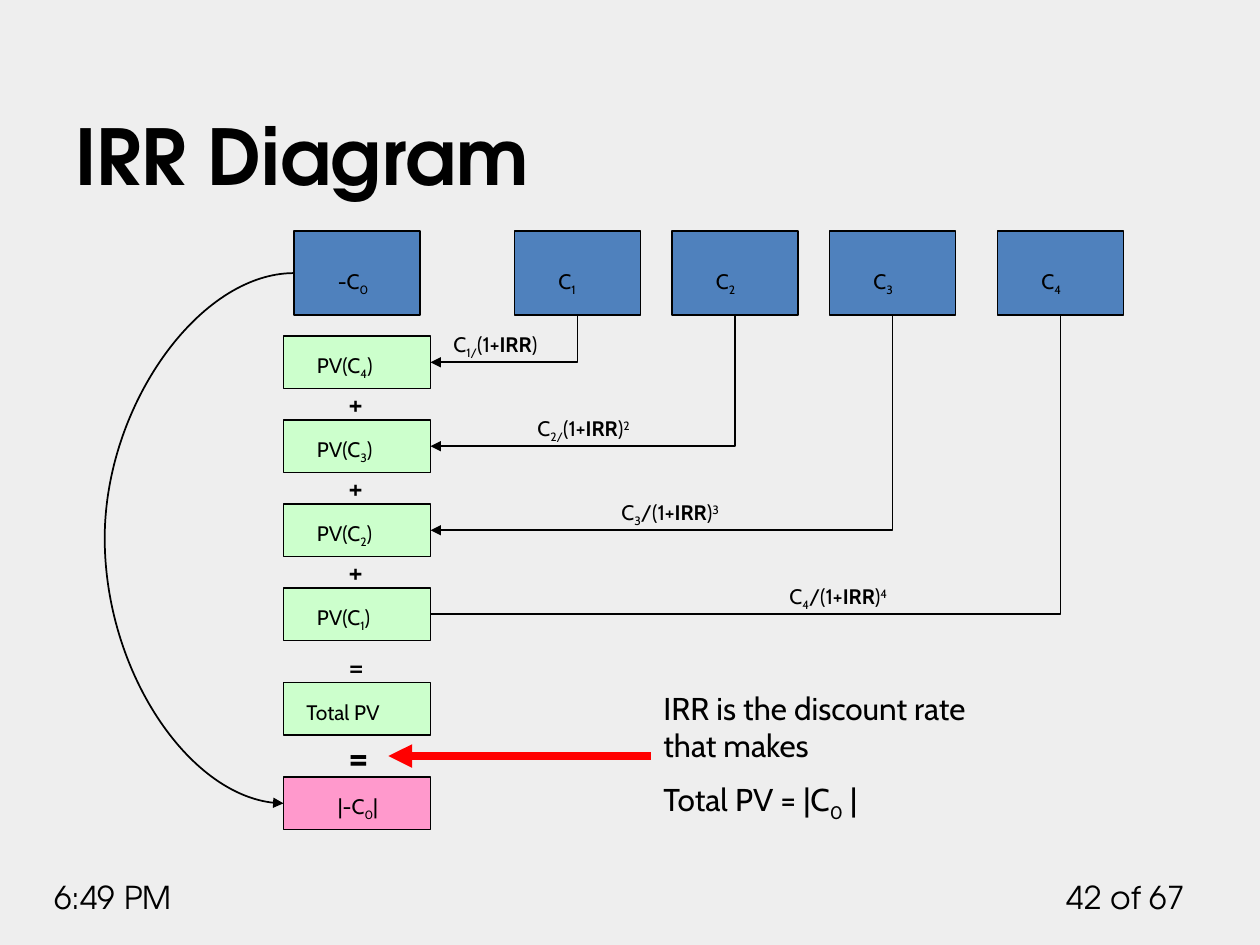
import dataclasses

import lxml.etree
import pptx
import pptx.dml.color
import pptx.enum.shapes
import pptx.enum.text
import pptx.oxml.ns
import pptx.util


@dataclasses.dataclass(frozen=True)
class Theme:
    """Colours, fonts and type sizes of the deck."""
    ground: str = "EEEEEE"
    ink: str = "000000"
    cash: str = "4F81BD"
    value: str = "CCFFCC"
    outlay: str = "FF99CC"
    accent: str = "FF0000"
    heading_font: str = "TeX Gyre Adventor"
    body_font: str = "Cabin"
    title: int = 44
    equals: int = 24
    body: int = 18
    label: int = 12


def grid(count):
    """Return a length of count twelfths of an inch."""
    return pptx.util.Cm(count * 2.54 / 12)


def colour(code):
    """Return the colour for a hex code."""
    return pptx.dml.color.RGBColor.from_string(code)


def sub(letter, index):
    """Return the spans of a symbol with a subscript."""
    return [(letter, ""), (index, "sub")]


class Painter:
    """Hold the theme and the current slide and draw each kind of element."""

    def __init__(self, slide, theme):
        """Keep the slide and theme and paint the background."""
        self.slide, self.theme = slide, theme
        slide.background.fill.solid()
        slide.background.fill.fore_color.rgb = colour(theme.ground)

    def box(self, left, top, width, height, fill):
        """Draw an outlined process box."""
        box = self.slide.shapes.add_shape(
            pptx.enum.shapes.MSO_SHAPE.FLOWCHART_PROCESS,
            grid(left), grid(top), grid(width), grid(height))
        box.shadow.inherit = False
        box.fill.solid()
        box.fill.fore_color.rgb = colour(fill)
        box.line.color.rgb = colour(self.theme.ink)
        box.line.width = pptx.util.Pt(1)

    def text(self, left, top, width, height, paragraphs, size, font=None,
             bold=False, align="LEFT", anchor="TOP"):
        """Write paragraphs made of (text, style) spans."""
        box = self.slide.shapes.add_textbox(
            grid(left), grid(top), grid(width), grid(height))
        frame = box.text_frame
        frame.word_wrap = True
        frame.vertical_anchor = getattr(pptx.enum.text.MSO_ANCHOR, anchor)
        for number, spans in enumerate(paragraphs):
            para = frame.add_paragraph() if number else frame.paragraphs[0]
            para.alignment = getattr(pptx.enum.text.PP_ALIGN, align)
            if number:
                para.space_before = pptx.util.Pt(size / 2)
            for words, style in spans:
                span = para.add_run()
                span.text = words
                span.font.size = pptx.util.Pt(size)
                span.font.name = font or self.theme.body_font
                span.font.color.rgb = colour(self.theme.ink)
                span.font.bold = bold or style == "bold"
                if style in ("sub", "sup"):
                    shift = "-25000" if style == "sub" else "30000"
                    span.font._element.set("baseline", shift)

    def line(self, begin, end, kind="STRAIGHT", code=None, width=1, arrow=True):
        """Draw a connector, with an arrowhead at its end if asked."""
        line = self.slide.shapes.add_connector(
            getattr(pptx.enum.shapes.MSO_CONNECTOR, kind),
            *(grid(value) for value in (*begin, *end)))
        line.line.color.rgb = colour(code or self.theme.ink)
        line.line.width = pptx.util.Pt(width)
        if arrow:
            lxml.etree.SubElement(line.line._ln, pptx.oxml.ns.qn("a:tailEnd"), type="triangle")
        properties = line._element.spPr
        lxml.etree.SubElement(properties, pptx.oxml.ns.qn("a:effectLst"))
        return properties

    def elbow(self, begin, end, arrow):
        """Draw a connector that goes down and then left."""
        middle_x, middle_y = (begin[0] + end[0]) / 2, (begin[1] + end[1]) / 2
        half_width, half_height = (end[1] - begin[1]) / 2, (begin[0] - end[0]) / 2
        properties = self.line((middle_x - half_width, middle_y - half_height),
                               (middle_x + half_width, middle_y + half_height),
                               "ELBOW", arrow=arrow)
        properties.find(pptx.oxml.ns.qn("a:xfrm")).set("rot", "5400000")
        properties.find(pptx.oxml.ns.qn("a:prstGeom")).set("prst", "bentConnector2")

    def curve(self, begin, end, reach):
        """Draw a curved arrow that bulges to the left by reach."""
        properties = self.line((end[0], end[1]), (begin[0], begin[1]), "CURVE")
        properties.find(pptx.oxml.ns.qn("a:xfrm")).set("rot", "10800000")
        geometry = properties.find(pptx.oxml.ns.qn("a:prstGeom"))
        for old in list(geometry):
            geometry.remove(old)
        adjustments = lxml.etree.SubElement(geometry, pptx.oxml.ns.qn("a:avLst"))
        bulge = round(100000 * reach / (begin[0] - end[0]))
        lxml.etree.SubElement(adjustments, pptx.oxml.ns.qn("a:gd"),
                              name="adj1", fmla=f"val {bulge}")


def main():
    """Build the IRR diagram and save the deck."""
    theme = Theme()
    deck = pptx.Presentation()
    deck.slide_width, deck.slide_height = grid(120), grid(90)
    page = Painter(deck.slides.add_slide(deck.slide_layouts[6]), theme)

    page.text(6, 4.7, 108, 15, [[("IRR Diagram", "")]], theme.title,
              theme.heading_font, bold=True, anchor="BOTTOM")
    page.text(4, 83, 19, 4.8, [[("6:49 PM", "")]], theme.body, theme.heading_font)
    page.text(100, 83, 14, 4.8, [[("42 of 67", "")]], theme.body,
              theme.heading_font, align="RIGHT")

    columns = [28, 49, 64, 79, 95]
    for period, left in enumerate(columns):
        page.box(left, 22, 12, 8, theme.cash)
        symbol = sub("C" if period else "-C", str(period))
        page.text(left + 3, 25, 6, 3.6, [symbol], theme.label)

    stack_left, stack_width, stack_height = 27, 14, 5
    stack_right = stack_left + stack_width
    formulas = [
        (42, 13, [("C", ""), ("1/", "sub"), ("(1+", "")], ""),
        (50, 14, [("C", ""), ("2/", "sub"), ("(1+", "")], "2"),
        (58, 13, sub("C", "3") + [("/(1+", "")], "3"),
        (74, 13, sub("C", "4") + [("/(1+", "")], "4"),
    ]
    for period, (left, width, start, power) in enumerate(formulas, 1):
        top = 24 + 8 * period
        last = period == len(formulas)
        page.box(stack_left, top, stack_width, stack_height, theme.value)
        page.text(29, top + 1, 9, 3.6,
                  [sub("PV(C", str(5 - period)) + [(")", "")]], theme.label)
        page.elbow((columns[period] + 6, 30), (stack_right, top + 2.5), arrow=not last)
        spans = start + [("IRR", "bold"), (")", "")]
        if power:
            spans.append((power, "sup"))
        page.text(left, top - 1, width, 3.6, [spans], theme.label)
        if not last:
            page.text(32, top + 4, 4, 4.8, [[("+", "")]], theme.body)

    page.text(32, 61, 4, 4.8, [[("=", "")]], theme.body)
    page.box(stack_left, 65, stack_width, stack_height, theme.value)
    page.text(28, 66, 13, 3.6, [[("Total PV", "")]], theme.label)
    page.text(32, 69, 4, 6, [[("=", "")]], theme.equals, bold=True)
    page.box(stack_left, 74, stack_width, stack_height, theme.outlay)
    page.text(31, 75, 7, 3.6, [sub("|-C", "0") + [("|", "")]], theme.label)

    page.curve((28, 26), (stack_left, 76.5), 18)
    page.line((62, 72), (37, 72), code=theme.accent, width=4.5)
    page.text(62, 65, 33, 13.8,
              [[("IRR is the discount rate that makes", "")],
               sub("Total PV = |C", "0") + [(" |", "")]], theme.body)
    deck.save("out.pptx")


if __name__ == "__main__":
    main()
